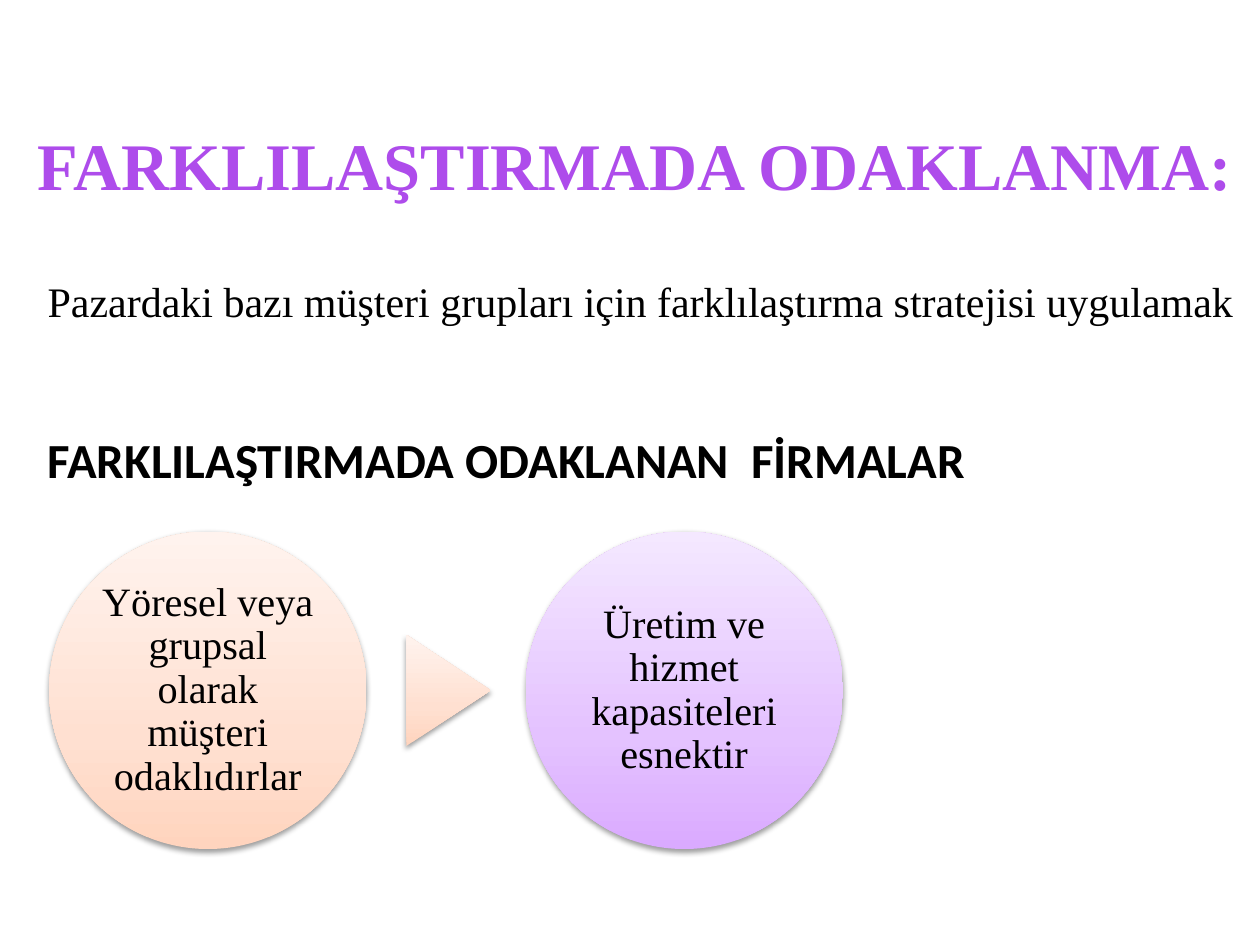
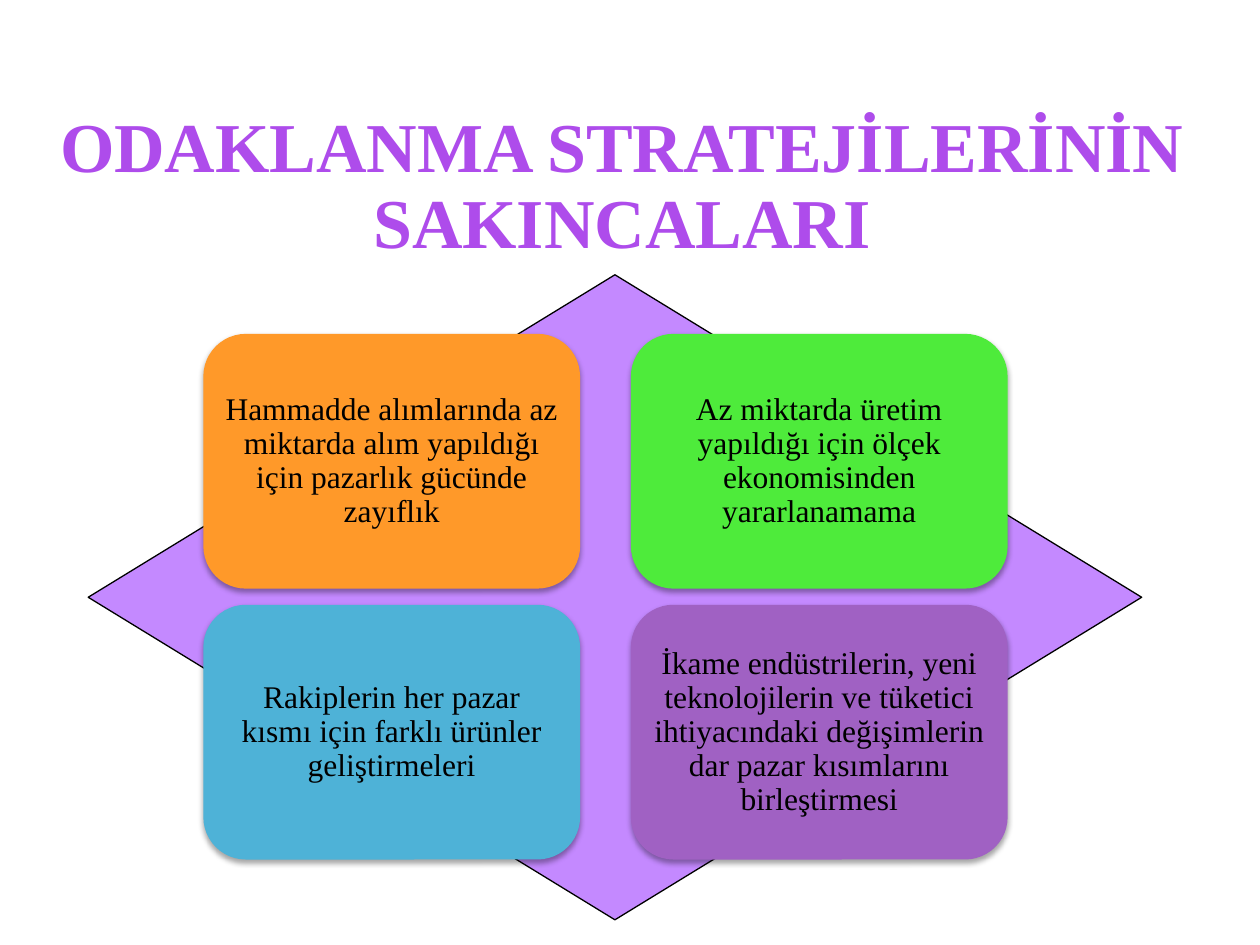
from lxml import etree
from pptx import Presentation
from pptx.dml.color import RGBColor
from pptx.enum.shapes import MSO_SHAPE
from pptx.enum.text import MSO_ANCHOR, PP_ALIGN
from pptx.oxml.ns import qn
from pptx.util import Pt

LEFT, CENTER = PP_ALIGN.LEFT, PP_ALIGN.CENTER
MIDDLE = MSO_ANCHOR.MIDDLE
ELLIPSE, TRIANGLE = MSO_SHAPE.OVAL, MSO_SHAPE.ISOSCELES_TRIANGLE
DIAMOND, CARD = MSO_SHAPE.DIAMOND, MSO_SHAPE.ROUNDED_RECTANGLE

SERIF, SANS = "Times New Roman", "Calibri"
BLACK, TITLE = "000000", "AE4CEB"
PEACH = [(0, "FFD4BE"), (35, "FFE0D1"), (100, "FFF3EE")]
LILAC = [(0, "DAAAFF"), (35, "E4C2FF"), (100, "F4E8FF")]

FOCUS_TITLE = "FARKLILAŞTIRMADA ODAKLANMA:"
FOCUS_INTRO = "Pazardaki bazı müşteri grupları için farklılaştırma stratejisi uygulamak"
FIRMS_HEADING = "FARKLILAŞTIRMADA ODAKLANAN  FİRMALAR"
FIRM_TRAITS = [
    ("Yöresel veya grupsal olarak müşteri odaklıdırlar", PEACH),
    ("Üretim ve hizmet kapasiteleri esnektir", LILAC),
]
DRAWBACKS_TITLE = "ODAKLANMA STRATEJİLERİNİN SAKINCALARI"
DRAWBACKS = [
    ("Hammadde alımlarında az miktarda alım yapıldığı için pazarlık gücünde zayıflık", "FF9929"),
    ("Az miktarda üretim yapıldığı için ölçek ekonomisinden yararlanamama", "4EEB3B"),
    ("Rakiplerin her pazar kısmı için farklı ürünler geliştirmeleri", "4EB2D7"),
    ("İkame endüstrilerin, yeni teknolojilerin ve tüketici ihtiyacındaki değişimlerin "
     "dar pazar kısımlarını birleştirmesi", "A061C3"),
]


def rgb(value):
    return RGBColor.from_string(value)


def add_words(frame, words, size, align, color=BLACK, font=SERIF, bold=False):
    frame.word_wrap = True
    para = frame.paragraphs[0]
    para.alignment = align
    para.line_spacing = 0.9
    span = para.add_run()
    span.text = words
    span.font.name = font
    span.font.size = Pt(size)
    span.font.bold = bold
    span.font.color.rgb = rgb(color)


def add_text(page, place, *words, **style):
    box = page.shapes.add_textbox(*map(Pt, place))
    add_words(box.text_frame, *words, **style)


def add_color(parent, color):
    return etree.SubElement(parent, qn("a:srgbClr"), val=color)


def paint_gradient(shape, stops):
    shape.fill.gradient()
    shape.fill.gradient_angle = 90
    gradient = shape.element.spPr.find(qn("a:gradFill"))
    gradient.set("rotWithShape", "0")
    stop_list = gradient.find(qn("a:gsLst"))
    for stop in list(stop_list):
        stop_list.remove(stop)
    for position, color in stops:
        add_color(etree.SubElement(stop_list, qn("a:gs"), pos=str(position * 1000)), color)


def add_shadow(shape, opacity, distance):
    effects = shape.element.spPr.find(qn("a:effectLst"))
    shadow = etree.SubElement(effects, qn("a:outerShdw"), blurRad=str(Pt(3.1)),
                              dist=str(Pt(distance)), dir="5400000", rotWithShape="0")
    etree.SubElement(add_color(shadow, BLACK), qn("a:alpha"), val=str(opacity * 1000))


def add_figure(page, kind, place, fill):
    shape = page.shapes.add_shape(kind, *map(Pt, place))
    shape.shadow.inherit = False
    shape.line.fill.background()
    if isinstance(fill, str):
        shape.fill.solid()
        shape.fill.fore_color.rgb = rgb(fill)
    else:
        paint_gradient(shape, fill)
    return shape


def add_label(shape, words, size, inset):
    frame = shape.text_frame
    frame.margin_left = frame.margin_right = Pt(inset)
    frame.margin_top = frame.margin_bottom = Pt(inset)
    frame.vertical_anchor = MIDDLE
    add_words(frame, words, size, CENTER)


def build_focus(page):
    add_text(page, (20.16, 157, 699.8, 40), FOCUS_INTRO, 24, LEFT)
    add_text(page, (20.16, 245.5, 600, 45), FIRMS_HEADING, 28, LEFT, font=SANS, bold=True)
    left, top, diameter, step = 28.1, 303.8, 181.4, 272.2
    for index, (words, stops) in enumerate(FIRM_TRAITS):
        circle = add_figure(page, ELLIPSE, (left + index * step, top, diameter, diameter), stops)
        add_shadow(circle, 38, 1.6)
        add_label(circle, words, 23, 2.2)
    width, height = 63.4, 48.2
    pointer_top = top + (diameter - height) / 2
    pointer = add_figure(page, TRIANGLE, (224.6, pointer_top, width, height), PEACH)
    pointer.rotation = 90
    add_shadow(pointer, 38, 1.6)
    add_text(page, (14.4, 72.7, 705.6, 50), FOCUS_TITLE, 38, LEFT, color=TITLE, bold=True)


def build_drawbacks(page):
    add_text(page, (22.3, 60.5, 666, 88), DRAWBACKS_TITLE, 40, CENTER, color=TITLE, bold=True)
    diamond = add_figure(page, DIAMOND, (50.4, 157, 602, 368.6), "C489FF")
    diamond.line.color.rgb = rgb(BLACK)
    diamond.line.width = Pt(0.75)
    left, top, column_step, row_step = 116.2, 190.8, 244.3, 154.8
    for index, (words, color) in enumerate(DRAWBACKS):
        row, column = divmod(index, 2)
        place = (left + column * column_step, top + row * row_step, 215.3, 145.6)
        card = add_figure(page, CARD, place, color)
        add_shadow(card, 35, 1.8)
        add_label(card, words, 18, 5)


def main():
    deck = Presentation()
    deck.slide_width, deck.slide_height = Pt(720), Pt(540)
    for build in (build_focus, build_drawbacks):
        build(deck.slides.add_slide(deck.slide_layouts[6]))
    deck.save("out.pptx")


if __name__ == "__main__":
    main()
